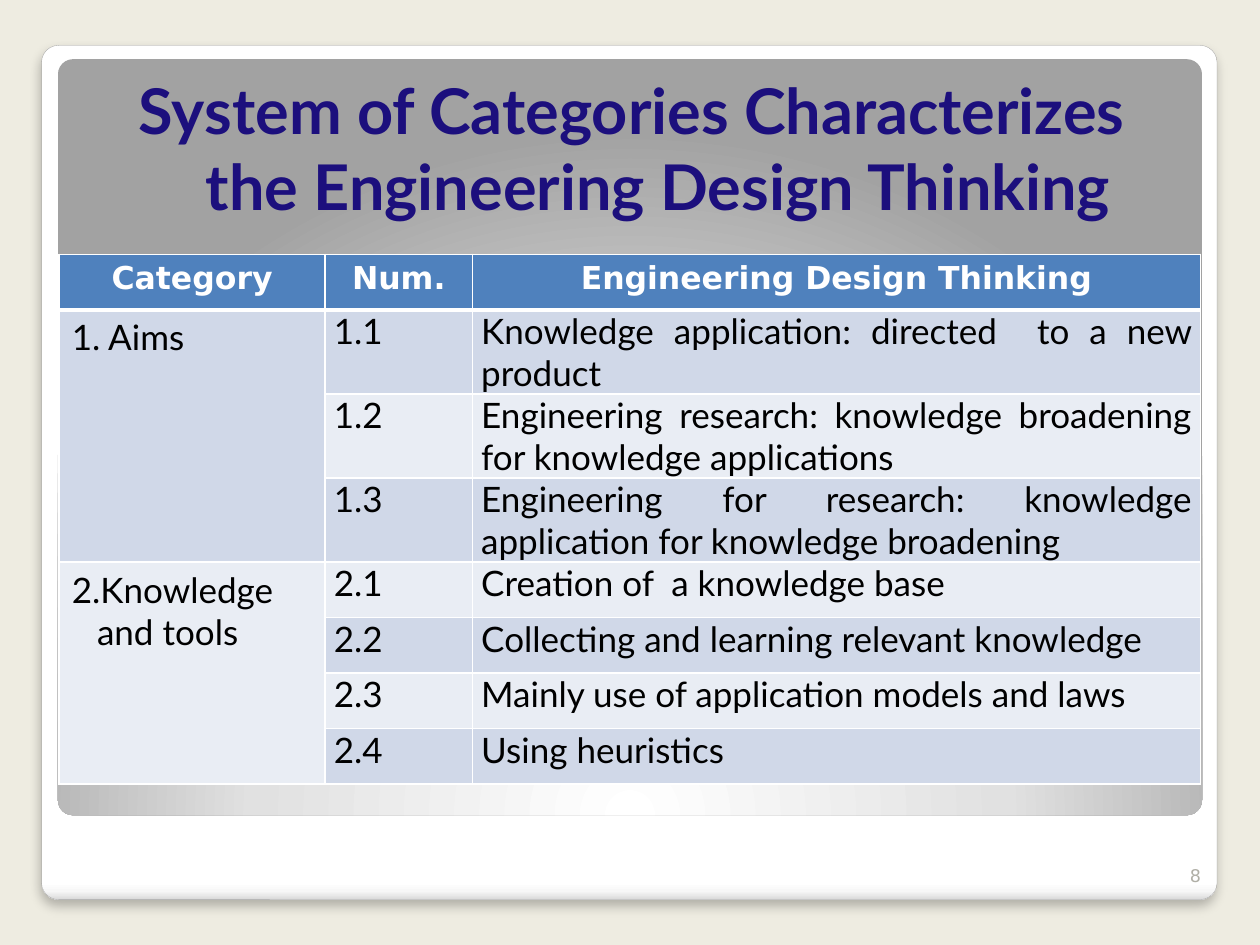
from dataclasses import dataclass
from typing import NamedTuple

from lxml import etree
from pptx import Presentation
from pptx.dml.color import RGBColor
from pptx.enum.shapes import MSO_SHAPE
from pptx.enum.text import MSO_ANCHOR, PP_ALIGN
from pptx.oxml import parse_xml
from pptx.oxml.ns import nsdecls, qn
from pptx.util import Inches, Pt

ROUND = MSO_SHAPE.ROUNDED_RECTANGLE
LEFT, MID, RIGHT, JUST = PP_ALIGN.LEFT, PP_ALIGN.CENTER, PP_ALIGN.RIGHT, PP_ALIGN.JUSTIFY
TOP, BOTTOM = MSO_ANCHOR.TOP, MSO_ANCHOR.BOTTOM
WIDE, HIGH = Inches(10), Inches(7.5)


class Font(NamedTuple):
    name: str
    size: int
    color: str
    bold: bool = False


@dataclass(frozen=True)
class Theme:
    back: str = "EEECE1"
    edge: str = "A4A4A4"
    rule: str = "FFFFFF"
    head_fill: str = "4F81BD"
    bands: tuple = ("D0D8E8", "E9EDF4")
    title: Font = Font("Lato", 36, "1C0F7D", True)
    head: Font = Font("DejaVu Sans", 18, "FFFFFF", True)
    body: Font = Font("Lato", 20, "000000")
    num: Font = Font("DejaVu Sans", 10, "B0AFA6")


class Box(NamedTuple):
    """Place and size in percent of the slide."""
    x: float
    y: float
    w: float
    h: float

    def emu(self) -> tuple:
        return tuple(int(v * full / 100) for v, full in zip(self, (WIDE, HIGH) * 2))


class Panel(NamedTuple):
    box: Box
    stops: tuple
    shade: str


class Group(NamedTuple):
    lines: tuple
    items: tuple


THEME = Theme()
PANELS = (
    Panel(Box(3.3, 4.8, 93.3, 90.4),
          ((0, "FFFFFF"), (98, "FFFFFF"), (99, "F7F7F7"), (100, "DADADA")),
          '<a:lin ang="5400000" scaled="0"/>'),
    Panel(Box(4.6, 6.27, 90.8, 80),
          ((0, "FFFFFF"), (55, "E1E1E1"), (100, "A2A2A2")),
          '<a:path path="circle"><a:fillToRect l="50000" t="175000"'
          ' r="50000" b="-75000"/></a:path>'),
)
HEADS = ("Category", "Num.", "Engineering Design Thinking")
GROUPS = (
    Group(("1. Aims",), (
        "Knowledge application: directed  to a new product",
        "Engineering research: knowledge broadening for knowledge applications",
        "Engineering for research: knowledge application for knowledge broadening")),
    Group(("2.Knowledge", "and tools"), (
        "Creation of  a knowledge base",
        "Collecting and learning relevant knowledge",
        "Mainly use of application models and laws",
        "Using heuristics")),
)
GRID = Box(4.7, 26.93, 90.6, 55.33)
COLS = (21.1, 11.7, 57.8)
LOW, TALL = 5.87, 8.67
ROWS = (LOW,) + (TALL,) * 3 + (LOW,) * 4


def rgb(code: str) -> RGBColor:
    return RGBColor.from_string(code)


def write(para, text: str, font: Font, align) -> None:
    para.alignment = align
    run = para.add_run()
    run.text = text
    run.font.name, run.font.size, run.font.bold = font.name, Pt(font.size), font.bold
    run.font.color.rgb = rgb(font.color)


def indent(para, left: float, first: float = 0) -> None:
    props = para._p.get_or_add_pPr()
    props.set("marL", str(Inches(left)))
    props.set("indent", str(Inches(first)))


def draw_panel(slide, panel: Panel):
    shape = slide.shapes.add_shape(ROUND, *panel.box.emu())
    shape.adjustments[0] = 0.02
    shape.shadow.inherit = False
    shape.line.fill.background()
    shape.fill.background()
    stops = "".join(f'<a:gs pos="{pos * 1000}"><a:srgbClr val="{code}"/></a:gs>'
                    for pos, code in panel.stops)
    grad = parse_xml(f'<a:gradFill {nsdecls("a")} rotWithShape="1">'
                     f'<a:gsLst>{stops}</a:gsLst>{panel.shade}</a:gradFill>')
    props = shape._element.spPr
    props.replace(props.find(qn("a:noFill")), grad)
    return shape


def raise_card(shape) -> None:
    """Give the card its thin edge and soft drop shadow."""
    shape.line.color.rgb = rgb(THEME.edge)
    shape.line.width = Pt(0.16)
    glow = shape._element.spPr.find(qn("a:effectLst"))
    glow.append(parse_xml(
        f'<a:outerShdw {nsdecls("a")} blurRad="{Pt(6)}" dist="{Pt(4)}" dir="5400000"'
        ' algn="t" rotWithShape="0"><a:srgbClr val="000000"><a:alpha val="25000"/>'
        '</a:srgbClr></a:outerShdw>'))


def add_text(slide, box: Box, text: str, font: Font, align, anchor):
    frame = slide.shapes.add_textbox(*box.emu()).text_frame
    frame.word_wrap = True
    frame.vertical_anchor = anchor
    write(frame.paragraphs[0], text, font, align)
    return frame


def style(cell, fill: str, base: int = 1) -> None:
    """Fill a cell and rule its four sides; base is the lower rule in points."""
    props = cell._tc.get_or_add_tcPr()
    for side, width in zip("LRTB", (1, 1, 1, base)):
        line = etree.SubElement(props, qn(f"a:ln{side}"), w=str(Pt(width)))
        paint = etree.SubElement(line, qn("a:solidFill"))
        etree.SubElement(paint, qn("a:srgbClr"), val=THEME.rule)
    cell.fill.solid()
    cell.fill.fore_color.rgb = rgb(fill)


def fill_item(cell, text: str) -> None:
    cell.margin_left = cell.margin_right = Inches(0.07)
    cell.margin_top = cell.margin_bottom = 0
    write(cell.text_frame.paragraphs[0], text, THEME.body, JUST)


def draw_table(slide) -> None:
    table = slide.shapes.add_table(len(ROWS), len(COLS), *GRID.emu()).table
    for col, share in zip(table.columns, COLS):
        col.width = int(WIDE * share / 100)
    for row, share in zip(table.rows, ROWS):
        row.height = int(HIGH * share / 100)
    for c, text in enumerate(HEADS):
        style(table.cell(0, c), THEME.head_fill, 3)
        write(table.cell(0, c).text_frame.paragraphs[0], text, THEME.head, MID)
    top = 1
    for g, group in enumerate(GROUPS, 1):
        lead = table.cell(top, 0)
        for i, text in enumerate(group.items):
            r = top + i
            band = THEME.bands[(r - 1) % 2]
            style(table.cell(r, 0), THEME.bands[g - 1])
            for c, words in ((1, f"{g}.{i + 1}"), (2, text)):
                style(table.cell(r, c), band)
                fill_item(table.cell(r, c), words)
        for i, text in enumerate(group.lines):
            frame = lead.text_frame
            para = frame.add_paragraph() if i else frame.paragraphs[0]
            write(para, text, THEME.body, LEFT)
            indent(para, 0.2 * i)
        top += len(group.items)
        lead.merge(table.cell(top - 1, 0))


def main() -> None:
    deck = Presentation()
    deck.slide_width, deck.slide_height = WIDE, HIGH
    slide = deck.slides.add_slide(deck.slide_layouts[6])
    slide.background.fill.solid()
    slide.background.fill.fore_color.rgb = rgb(THEME.back)
    card, _ = [draw_panel(slide, panel) for panel in PANELS]
    raise_card(card)
    title = add_text(slide, Box(5.5, 6.27, 89.5, 19.6),
                     "System of Categories Characterizes  the Engineering Design Thinking",
                     THEME.title, MID, TOP)
    title.margin_left, title.margin_top = Inches(0.2), Inches(0.1)
    title.paragraphs[0].space_before = Pt(2.5)
    indent(title.paragraphs[0], 0.29, -0.29)
    add_text(slide, Box(91.3, 89.07, 5, 5.33), "8", THEME.num, RIGHT, BOTTOM)
    draw_table(slide)
    deck.save("out.pptx")


if __name__ == "__main__":
    main()
